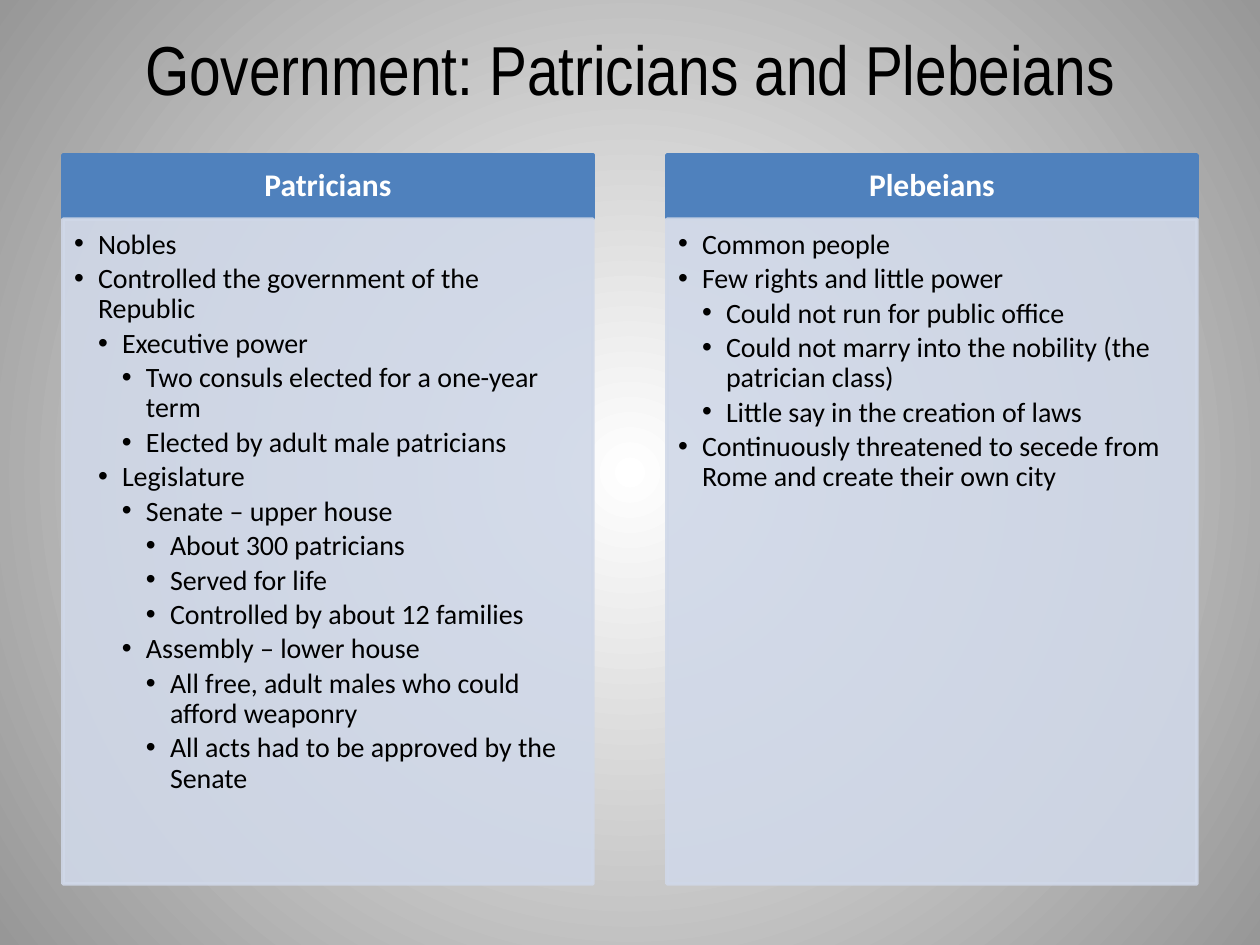
from lxml import etree
from pptx import Presentation
from pptx.dml.color import RGBColor
from pptx.enum.text import MSO_ANCHOR, MSO_AUTO_SIZE, PP_ALIGN
from pptx.oxml.ns import qn
from pptx.util import Emu, Pt

MIDDLE, TOP = MSO_ANCHOR.MIDDLE, MSO_ANCHOR.TOP
CENTER, LEFT = PP_ALIGN.CENTER, PP_ALIGN.LEFT
NO_FIT = MSO_AUTO_SIZE.NONE

EMU_PER_PX = 914400 / 126
COLORS = {
    "glow": "FFFFFF",
    "edge": "979797",
    "header": "4F81BD",
    "panel": "D0D8E8",
    "text": "000000",
    "header_text": "FFFFFF",
}
COMPARISON_LAYOUT = 4
MARGIN, COLUMN_WIDTH, COLUMN_STEP = 63, 530, 604
HEADER_TOP, HEADER_HEIGHT = 155, 63
PANEL_TOP, PANEL_HEIGHT = 219, 665
INDENT = 24

# Each column: heading, then (outline level, text)
COLUMNS = [
    ("Patricians", [
        (1, "Nobles"),
        (1, "Controlled the government of the Republic"),
        (2, "Executive power"),
        (3, "Two consuls elected for a one-year term"),
        (3, "Elected by adult male patricians"),
        (2, "Legislature"),
        (3, "Senate – upper house"),
        (4, "About 300 patricians"),
        (4, "Served for life"),
        (4, "Controlled by about 12 families"),
        (3, "Assembly – lower house"),
        (4, "All free, adult males who could afford weaponry"),
        (4, "All acts had to be approved by the Senate"),
    ]),
    ("Plebeians", [
        (1, "Common people"),
        (1, "Few rights and little power"),
        (2, "Could not run for public office"),
        (2, "Could not marry into the nobility (the patrician class)"),
        (2, "Little say in the creation of laws"),
        (1, "Continuously threatened to secede from Rome and create their own city"),
    ]),
]


def px(length):
    return Emu(round(length * EMU_PER_PX))


def color(name):
    return RGBColor.from_string(COLORS[name])


class SlideBuilder:
    def __init__(self, slide):
        self.slide = slide

    def background(self):
        fill = self.slide.background.fill
        fill.gradient()
        for stop, name in zip(fill.gradient_stops, ("glow", "edge")):
            stop.color.rgb = color(name)
        # Turn the linear gradient into one that spreads from the centre
        linear = self.slide.element.find(".//" + qn("a:lin"))
        radial = etree.Element(qn("a:path"), {"path": "circle"})
        etree.SubElement(radial, qn("a:fillToRect"),
                         l="50000", t="50000", r="50000", b="50000")
        linear.getparent().replace(linear, radial)

    def place(self, box, left, top, width, height, insets, anchor):
        box.left, box.top = px(left), px(top)
        box.width, box.height = px(width), px(height)
        frame = box.text_frame
        frame.word_wrap = True
        frame.auto_size = NO_FIT
        frame.vertical_anchor = anchor
        (frame.margin_left, frame.margin_top,
         frame.margin_right, frame.margin_bottom) = map(px, insets)
        return frame

    def paint(self, box, name, opacity=100):
        box.fill.solid()
        box.fill.fore_color.rgb = color(name)
        box.line.color.rgb = color(name)
        box.line.width = Pt(2)
        if opacity < 100:
            for tint in box.element.spPr.iter(qn("a:srgbClr")):
                etree.SubElement(tint, qn("a:alpha"), val=str(opacity * 1000))

    def add_text(self, para, text, size, font="Calibri", ink="text",
                 bold=False, align=LEFT, spacing=0.9, after=0):
        para.alignment = align
        para.line_spacing = spacing
        para.space_before, para.space_after = Pt(0), Pt(after)
        span = para.add_run()
        span.text = text
        span.font.size, span.font.name, span.font.bold = Pt(size), font, bold
        span.font.color.rgb = color(ink)

    def title(self, text):
        frame = self.place(self.slide.shapes.title, MARGIN, 0, 1134, 136,
                           (13, 6, 13, 6), MIDDLE)
        self.add_text(frame.paragraphs[0], text, 39.6, "Arial Narrow",
                      align=CENTER, spacing=1.0)

    def header(self, box, left, text):
        frame = self.place(box, left, HEADER_TOP, COLUMN_WIDTH, HEADER_HEIGHT,
                           (18, 10, 18, 10), MIDDLE)
        self.paint(box, "header")
        self.add_text(frame.paragraphs[0], text, 18, ink="header_text",
                      bold=True, align=CENTER)

    def outline(self, box, left, items):
        frame = self.place(box, left, PANEL_TOP, COLUMN_WIDTH, PANEL_HEIGHT,
                           (11, 11, 15, 18), TOP)
        self.paint(box, "panel", opacity=90)
        for index, (level, text) in enumerate(items):
            para = frame.add_paragraph() if index else frame.paragraphs[0]
            para.level = level - 1
            self.add_text(para, text, 16, after=2.4)
            # Bullet with a hanging indent
            properties = para._p.get_or_add_pPr()
            properties.set("marL", str(px(INDENT * level)))
            properties.set("indent", str(-px(INDENT)))
            etree.SubElement(properties, qn("a:buChar"), char="•")


def main():
    deck = Presentation()
    deck.slide_width, deck.slide_height = px(1260), px(945)
    slide = deck.slides.add_slide(deck.slide_layouts[COMPARISON_LAYOUT])
    builder = SlideBuilder(slide)

    builder.background()
    builder.title("Government: Patricians and Plebeians")

    # Two columns, each a header above an outline panel
    bodies = list(slide.placeholders)[1:]
    for index, (heading, items) in enumerate(COLUMNS):
        left = MARGIN + index * COLUMN_STEP
        header, panel = bodies[2 * index:2 * index + 2]
        builder.header(header, left, heading)
        builder.outline(panel, left, items)

    deck.save("out.pptx")


if __name__ == "__main__":
    main()
